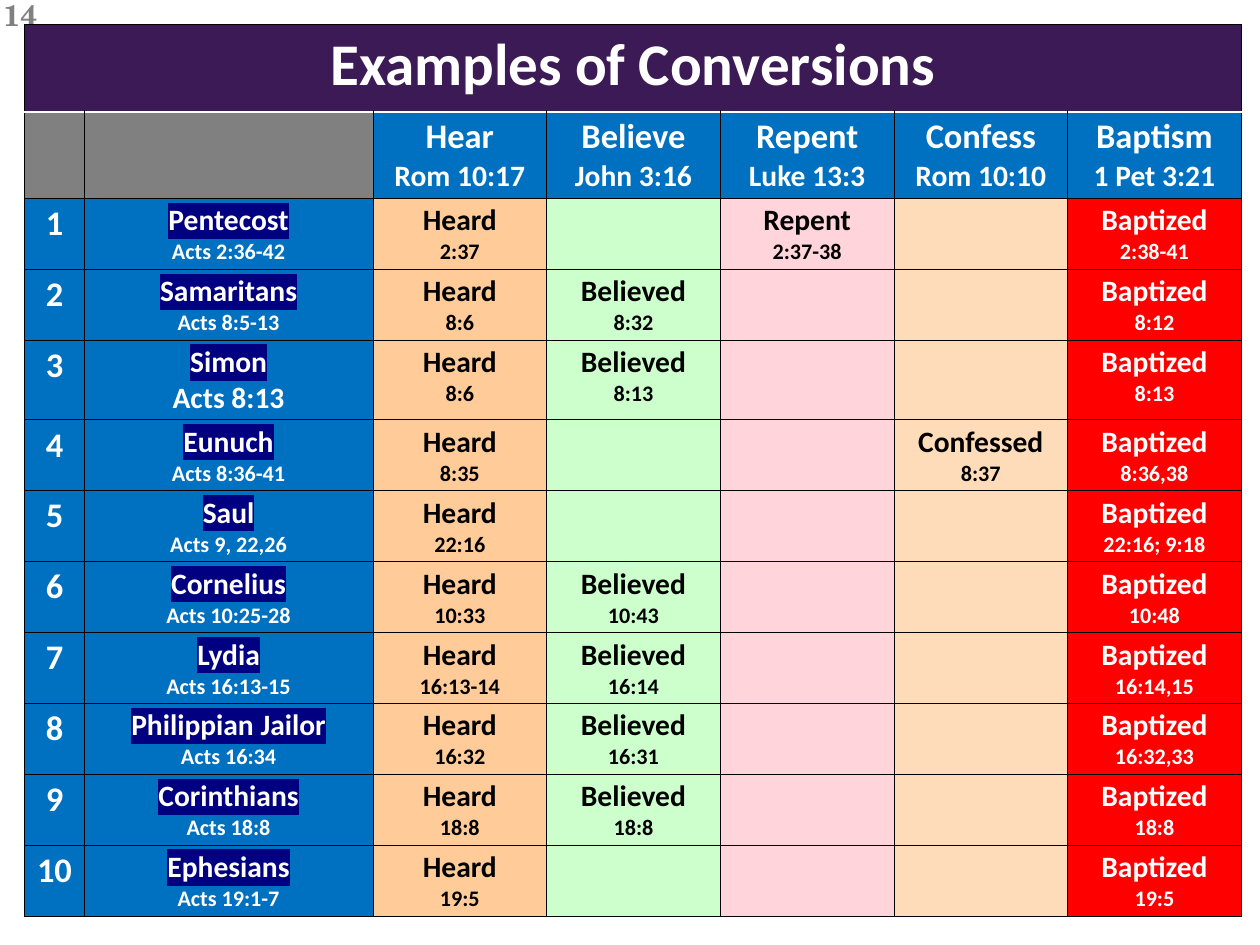
from lxml import etree
from pptx import Presentation
from pptx.dml.color import RGBColor
from pptx.enum.text import MSO_ANCHOR, PP_ALIGN
from pptx.oxml.ns import qn
from pptx.util import Inches, Pt

CENTER = PP_ALIGN.CENTER
TOP = MSO_ANCHOR.TOP
BLACK, WHITE, GRAY = "000000", "FFFFFF", "808080"
PURPLE, BLUE, NAVY = "3C1A56", "0070C0", "000080"

COL_WIDTHS = [0.67, 3.26] + [1.96] * 5
ROW_HEIGHTS = [0.98] * 2 + [0.78] * 10
EDGES = ["L", "R", "T", "B"]

STEPS = [
    ("Hear", "Rom 10:17", "Heard", "FFCC99", BLACK),
    ("Believe", "John 3:16", "Believed", "CCFFCC", BLACK),
    ("Repent", "Luke 13:3", "Repent", "FFD5DB", BLACK),
    ("Confess", "Rom 10:10", "Confessed", "FFDCB9", BLACK),
    ("Baptism", "1 Pet 3:21", "Baptized", "FF0000", WHITE),
]

CONVERSIONS = [
    ("Pentecost", "Acts 2:36-42", ["2:37", "", "2:37-38", "", "2:38-41"]),
    ("Samaritans", "Acts 8:5-13", ["8:6", "8:32", "", "", "8:12"]),
    ("Simon", "Acts 8:13", ["8:6", "8:13", "", "", "8:13"]),
    ("Eunuch", "Acts 8:36-41", ["8:35", "", "", "8:37", "8:36,38"]),
    ("Saul", "Acts 9, 22,26", ["22:16", "", "", "", "22:16; 9:18"]),
    ("Cornelius", "Acts 10:25-28", ["10:33", "10:43", "", "", "10:48"]),
    ("Lydia", "Acts 16:13-15", ["16:13-14", "16:14", "", "", "16:14,15"]),
    ("Philippian Jailor", "Acts 16:34", ["16:32", "16:31", "", "", "16:32,33"]),
    ("Corinthians", "Acts 18:8", ["18:8", "18:8", "", "", "18:8"]),
    ("Ephesians", "Acts 19:1-7", ["19:5", "", "", "", "19:5"]),
]


def rgb(color):
    return RGBColor.from_string(color)


def add_run(p, text, size, color, font="Calibri"):
    r = p.add_run()
    r.text = text
    r.font.color.rgb = rgb(color)
    for name, value in {"name": font, "size": Pt(size), "bold": True}.items():
        setattr(r.font, name, value)
    return r


def highlight(r, color):
    mark = etree.Element(qn("a:highlight"))
    etree.SubElement(mark, qn("a:srgbClr"), val=color)
    r.font._element.find(qn("a:solidFill")).addnext(mark)


def set_border(cell, edge, color, width):
    tc_pr = cell._tc.get_or_add_tcPr()
    ln = etree.Element(qn(f"a:ln{edge}"), w=str(Pt(width)))
    fill = etree.SubElement(ln, qn("a:solidFill"))
    etree.SubElement(fill, qn("a:srgbClr"), val=color)
    tc_pr.insert(EDGES.index(edge), ln)


def fill_cell(cell, fill, lines=(), color=WHITE, mark=None):
    cell.fill.solid()
    cell.fill.fore_color.rgb = rgb(fill)
    cell.vertical_anchor = TOP
    tf = cell.text_frame
    for i, (text, size) in enumerate(lines):
        p = tf.add_paragraph() if i else tf.paragraphs[0]
        p.alignment = CENTER
        r = add_run(p, text, size, color)
        if mark and i == 0:
            highlight(r, mark)


def add_grid(s):
    table = s.shapes.add_table(
        len(ROW_HEIGHTS), len(COL_WIDTHS), Inches(0.28), Inches(0.28),
        Inches(sum(COL_WIDTHS)), Inches(sum(ROW_HEIGHTS))).table
    table.first_row = table.horz_banding = False
    for col, width in zip(table.columns, COL_WIDTHS):
        col.width = Inches(width)
    for row, height in zip(table.rows, ROW_HEIGHTS):
        row.height = Inches(height)
    for y in range(len(ROW_HEIGHTS)):
        for x in range(len(COL_WIDTHS)):
            for edge in EDGES:
                under_title = (y, edge) in [(0, "B"), (1, "T")]
                line = (WHITE, 2) if under_title else (BLACK, 0.75)
                set_border(table.cell(y, x), edge, *line)
    return table


def fill_headings(table):
    table.cell(0, 0).merge(table.cell(0, len(COL_WIDTHS) - 1))
    fill_cell(table.cell(0, 0), PURPLE, [("Examples of Conversions", 48)])
    for x in range(2):
        fill_cell(table.cell(1, x), GRAY)
    for x, (step, verse, *_) in enumerate(STEPS, 2):
        fill_cell(table.cell(1, x), BLUE, [(step, 28), (verse, 24)])


def fill_conversions(table):
    for number, (name, passage, verses) in enumerate(CONVERSIONS, 1):
        y = number + 1
        passage_size = 24 if name == "Simon" else 18
        fill_cell(table.cell(y, 0), BLUE, [(str(number), 28)])
        fill_cell(table.cell(y, 1), BLUE,
                  [(name, 24), (passage, passage_size)], mark=NAVY)
        for x, (verse, step) in enumerate(zip(verses, STEPS), 2):
            _, _, deed, fill, color = step
            lines = [(deed, 24), (verse, 18)] if verse else []
            fill_cell(table.cell(y, x), fill, lines, color)


def add_page_number(s):
    sp = s.shapes.add_textbox(
        Inches(-0.06), Inches(-0.08), Inches(1.34), Inches(0.33))
    tf = sp.text_frame
    for name, value in {"word_wrap": True, "vertical_anchor": TOP}.items():
        setattr(tf, name, value)
    add_run(tf.paragraphs[0], "14", 24, GRAY, "TeX Gyre Schola")


def main():
    prs = Presentation()
    prs.slide_width, prs.slide_height = Inches(14.22), Inches(10.67)
    s = prs.slides.add_slide(prs.slide_layouts[6])
    add_page_number(s)
    table = add_grid(s)
    fill_headings(table)
    fill_conversions(table)
    prs.save("out.pptx")


if __name__ == "__main__":
    main()
